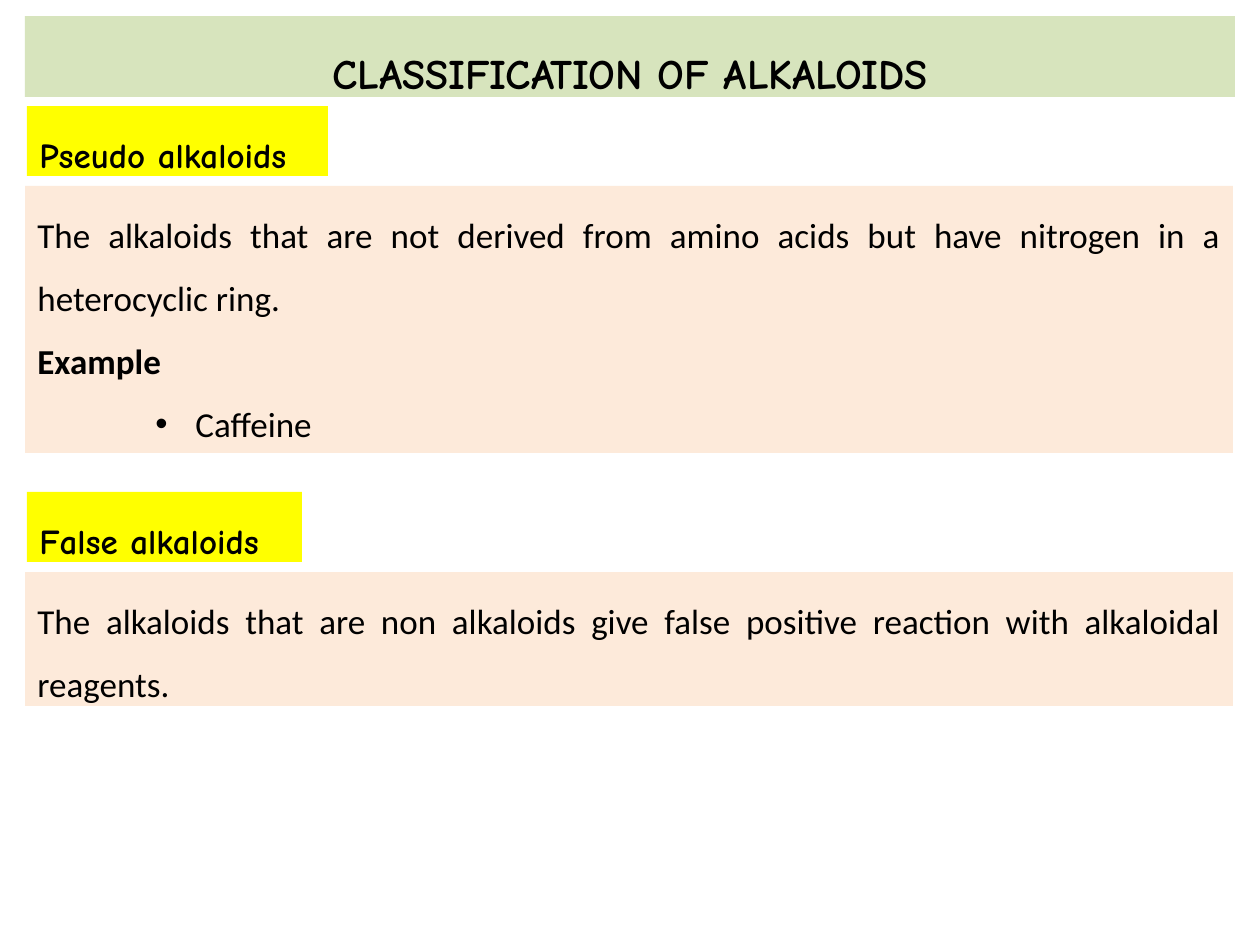
from lxml.etree import SubElement
from pptx import Presentation
from pptx.dml.color import RGBColor
from pptx.enum.text import MSO_ANCHOR, MSO_AUTO_SIZE, PP_ALIGN
from pptx.oxml.ns import qn
from pptx.util import Pt

PX = 914400 // 126
HUES = {"title": "D7E4BD", "label": "FFFF00", "body": "FDEADA", "ink": "000000"}
HEAD, TEXT = "Comic Neue", "Calibri"

TITLE = "CLASSIFICATION OF ALKALOIDS"
# label, label width, top, body height, body lines as (text, style)
PARTS = [
    ("Pseudo alkaloids", 301, 106, 267, [
        ("The alkaloids that are not derived from amino acids but have "
         "nitrogen in a heterocyclic ring.", "plain"),
        ("Example", "bold"),
        ("Caffeine", "bullet"),
    ]),
    ("False alkaloids", 275, 492, 134, [
        ("The alkaloids that are non alkaloids give false positive reaction "
         "with alkaloidal reagents.", "plain"),
    ]),
]
LEFT, WIDE = 25, 1208
LABEL_H, STEP = 70, 80  # label height, label top to body top


def add_bullet(para):
    props = para._p.get_or_add_pPr()
    props.set("marL", str(158 * PX))
    props.set("indent", str(-40 * PX))
    SubElement(props, qn("a:buFont")).set("typeface", "Arial")
    SubElement(props, qn("a:buChar")).set("char", "•")


def add_box(slide, area, kind, lines, font, size, align, wrap=True):
    box = slide.shapes.add_textbox(*(n * PX for n in area))
    box.fill.solid()
    box.fill.fore_color.rgb = RGBColor.from_string(HUES[kind])
    frame = box.text_frame
    frame.text = "\n".join(text for text, _ in lines)
    frame.word_wrap = wrap
    frame.auto_size = MSO_AUTO_SIZE.SHAPE_TO_FIT_TEXT
    frame.vertical_anchor = MSO_ANCHOR.TOP
    for para, (_, style) in zip(frame.paragraphs, lines):
        para.alignment = align
        para.line_spacing = 1.5
        if style == "bullet":
            add_bullet(para)
        for run in para.runs:
            run.font.name = font
            run.font.size = Pt(size)
            run.font.bold = style == "bold"
            run.font.color.rgb = RGBColor.from_string(HUES["ink"])


deck = Presentation()
deck.slide_width, deck.slide_height = 1260 * PX, 945 * PX
slide = deck.slides.add_slide(deck.slide_layouts[6])

# Title band
add_box(slide, (LEFT, 16, 1210, 81), "title", [(TITLE, "bold")],
        HEAD, 24, PP_ALIGN.CENTER)

# Label and definition for each class
for label, width, top, height, lines in PARTS:
    add_box(slide, (LEFT + 2, top, width, LABEL_H), "label",
            [(label, "bold")], HEAD, 20, PP_ALIGN.LEFT, wrap=False)
    add_box(slide, (LEFT, top + STEP, WIDE, height), "body", lines,
            TEXT, 20, PP_ALIGN.JUSTIFY)

deck.save("out.pptx")
